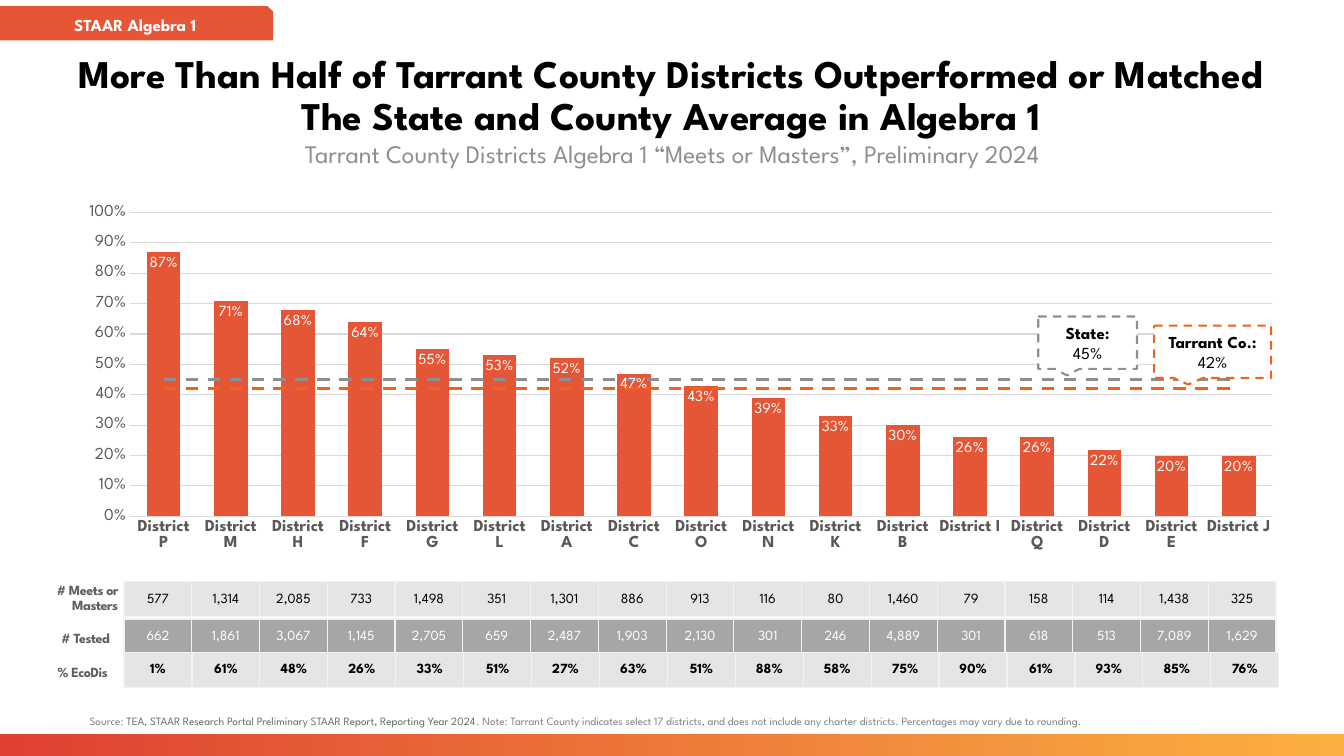
"""Build the Algebra 1 district results slide with a combined chart and data rows."""
from lxml import etree
from pptx import Presentation
from pptx.chart.data import CategoryChartData
from pptx.dml.color import RGBColor
from pptx.enum.chart import XL_CHART_TYPE, XL_LABEL_POSITION, XL_TICK_MARK
from pptx.enum.dml import MSO_LINE
from pptx.enum.shapes import MSO_SHAPE
from pptx.enum.text import MSO_ANCHOR, PP_ALIGN
from pptx.oxml import parse_xml
from pptx.oxml.ns import nsdecls, qn
from pptx.util import Inches, Pt

FONT = "League Spartan"
COLORS = {
    "orange": "E45635", "county": "EF6418", "state": "8B8E93", "black": "000000",
    "white": "FFFFFF", "axis": "595959", "grid": "D9D9D9", "label": "5C5F63",
    "pale": "E4E5E6", "mid": "A6A6A6", "border": "F2F2F2", "source": "808080",
    "report": "5E6E60", "bar_start": "DF4132", "bar_end": "FBB040",
}
TITLE = ("More Than Half of Tarrant County Districts Outperformed or Matched "
         "The State and County Average in Algebra 1")
SUBTITLE = "Tarrant County Districts Algebra 1 “Meets or Masters”, Preliminary 2024"
TAG = "STAAR Algebra 1"
SOURCE = [
    ("Source: ", {}),
    ("TEA, STAAR Research Portal Preliminary STAAR Report, Reporting Year 2024", {"color": "report"}),
    (". Note: Tarrant County indicates select 17 districts, and does not include any "
     "charter districts. Percentages may vary due to rounding.", {}),
]
DISTRICTS = [f"District {letter}" for letter in "PMHFGLACONKBIQDEJ"]
RATES = [0.87, 0.71, 0.68, 0.64, 0.55, 0.53, 0.52, 0.47, 0.43,
         0.39, 0.33, 0.3, 0.26, 0.26, 0.22, 0.2, 0.2]
AVERAGES = [("Series 2", 0.45, "state"), ("Series 3", 0.42, "county")]
CALLOUTS = [
    ("State:", "45%", "state", (77.25, 41.87, 7.35, 6.93)),
    ("Tarrant Co.:", "42%", "county", (85.88, 43.07, 8.7, 6.93)),
]
DATA_ROWS = [
    {"label": "# Meets or Masters", "label_box": (2.4, 76.4, 6.83, 5.6), "wrap": True,
     "box": (9.23, 76.93, 85.73, 4.67), "fill": "pale", "color": "black", "bold": False,
     "values": "577 1,314 2,085 733 1,498 351 1,301 886 913 116 80 1,460 79 158 114 1,438 325"},
    {"label": "# Tested", "label_box": (4.13, 82.8, 4.88, 3.47), "wrap": False,
     "box": (9.23, 81.87, 85.73, 4.67), "fill": "mid", "color": "white", "bold": False,
     "values": "662 1,861 3,067 1,145 2,705 659 2,487 1,903 2,130 301 246 4,889 301 618 513 7,089 1,629"},
    {"label": "% EcoDis", "label_box": (3.83, 87.33, 5.4, 3.47), "wrap": False,
     "box": (9.23, 86.27, 85.95, 4.67), "fill": "pale", "color": "black", "bold": True,
     "values": "1% 61% 48% 26% 33% 51% 27% 63% 51% 88% 58% 75% 90% 61% 93% 85% 76%"},
]
PLOT_AREA = {"x": 0.055, "y": 0.039, "w": 0.942, "h": 0.796}

presentation = Presentation()
presentation.slide_width, presentation.slide_height = Inches(13.33), Inches(7.5)
slide = presentation.slides.add_slide(presentation.slide_layouts[5])
shapes = slide.shapes


def rgb(name):
    return RGBColor.from_string(COLORS[name])


def place(box):
    """Turn percentages of the slide into lengths."""
    sides = (presentation.slide_width, presentation.slide_height) * 2
    return [int(side * share / 100) for side, share in zip(sides, box)]


def style_font(font, size, color, bold=False):
    font.name, font.size, font.bold = FONT, Pt(size), bold
    font.color.rgb = rgb(color)


def write(frame, *lines, size=12, color="black", bold=False, align=PP_ALIGN.CENTER,
          spacing=None, tracking=None, inset=0.06, wrap=True, anchor=MSO_ANCHOR.MIDDLE):
    """Fill a text frame; each line is a string or a list of (text, format) runs."""
    frame.word_wrap, frame.vertical_anchor = wrap, anchor
    frame.margin_left = frame.margin_right = Inches(inset)
    frame.margin_top = frame.margin_bottom = Inches(min(inset, 0.06))
    for number, line in enumerate(lines):
        paragraph = frame.add_paragraph() if number else frame.paragraphs[0]
        paragraph.alignment, paragraph.line_spacing = align, spacing
        for text, changes in [(line, {})] if isinstance(line, str) else line:
            run = paragraph.add_run()
            run.text = text
            style_font(run.font, **{"size": size, "color": color, "bold": bold, **changes})
            if tracking is not None:
                run.font._element.set("spc", str(int(tracking * 100)))


def add_box(kind, box, fill, line=None):
    shape = shapes.add_shape(kind, *place(box))
    shape.shadow.inherit = False
    shape.fill.solid()
    shape.fill.fore_color.rgb = rgb(fill)
    if line:
        shape.line.color.rgb = rgb(line)
        shape.line.width, shape.line.dash_style = Pt(1.5), MSO_LINE.DASH
    else:
        shape.line.fill.background()
    return shape


def add_text(box, *lines, **style):
    write(shapes.add_textbox(*place(box)).text_frame, *lines, **style)


def move_averages_to_lines(chart):
    """Move every series after the first from the bar plot to a line plot."""
    bars = chart._chartSpace.find(".//" + qn("c:barChart"))
    lines = parse_xml(f'<c:lineChart {nsdecls("c")}><c:grouping val="standard"/>'
                      '<c:varyColors val="0"/></c:lineChart>')
    for series in bars.findall(qn("c:ser"))[1:]:
        for flag in series.findall(qn("c:invertIfNegative")):
            series.remove(flag)
        marker = etree.Element(qn("c:marker"))
        etree.SubElement(marker, qn("c:symbol")).set("val", "none")
        series.find(qn("c:spPr")).addnext(marker)
        etree.SubElement(series, qn("c:smooth")).set("val", "0")
        lines.append(series)
    etree.SubElement(lines, qn("c:marker")).set("val", "1")
    for axis in bars.findall(qn("c:axId")):
        etree.SubElement(lines, qn("c:axId")).set("val", axis.get("val"))
    bars.addnext(lines)


def set_plot_area(chart):
    plot_area = chart._chartSpace.find(".//" + qn("c:plotArea"))
    for old in plot_area.findall(qn("c:layout")):
        plot_area.remove(old)
    layout = etree.Element(qn("c:layout"))
    manual = etree.SubElement(layout, qn("c:manualLayout"))
    settings = {"layoutTarget": "inner", "xMode": "edge", "yMode": "edge", **PLOT_AREA}
    for name, value in settings.items():
        etree.SubElement(manual, qn(f"c:{name}")).set("val", str(value))
    plot_area.insert(0, layout)


def add_results_chart(box):
    data = CategoryChartData(number_format="0%")
    data.categories = DISTRICTS
    data.add_series("Series 1", RATES)
    for name, average, _ in AVERAGES:
        data.add_series(name, [average] * len(DISTRICTS))
    chart = shapes.add_chart(XL_CHART_TYPE.COLUMN_CLUSTERED, *place(box), data).chart
    chart.has_legend = chart.has_title = False
    style_font(chart.font, 10, "black")
    plot = chart.plots[0]
    plot.gap_width, plot.vary_by_categories = 100, False
    rates, *averages = plot.series
    rates.format.fill.solid()
    rates.format.fill.fore_color.rgb = rgb("orange")
    labels = rates.data_labels
    labels.show_value, labels.position = True, XL_LABEL_POSITION.INSIDE_END
    labels.number_format, labels.number_format_is_linked = "0%", False
    style_font(labels.font, 11, "white")
    for series, (_, _, color) in zip(averages, AVERAGES):
        line = series.format.line
        line.color.rgb, line.width, line.dash_style = rgb(color), Pt(2.25), MSO_LINE.DASH
    for axis, bold in ((chart.category_axis, True), (chart.value_axis, False)):
        axis.major_tick_mark = axis.minor_tick_mark = XL_TICK_MARK.NONE
        style_font(axis.tick_labels.font, 12, "axis", bold)
    values = chart.value_axis
    values.minimum_scale, values.maximum_scale, values.major_unit = 0, 1, 0.1
    values.tick_labels.number_format, values.tick_labels.number_format_is_linked = "0%", False
    values.format.line.fill.background()
    for line in (chart.category_axis.format.line, values.major_gridlines.format.line):
        line.color.rgb, line.width = rgb("grid"), Pt(0.75)
    move_averages_to_lines(chart)
    set_plot_area(chart)


def add_data_row(row):
    add_text(row["label_box"], row["label"], size=10, color="label", bold=True, spacing=0.9,
             tracking=-0.3, wrap=row["wrap"],
             align=PP_ALIGN.RIGHT if row["wrap"] else PP_ALIGN.LEFT)
    table = shapes.add_table(1, len(DISTRICTS), *place(row["box"])).table
    table.first_row = table.horz_banding = False
    for cell, value in zip(table.iter_cells(), row["values"].split()):
        write(cell.text_frame, value, size=10, color=row["color"], bold=row["bold"], inset=0.01)
        cell.vertical_anchor = MSO_ANCHOR.MIDDLE
        cell.margin_left = cell.margin_right = cell.margin_top = Inches(0.01)
        cell.margin_bottom = 0
        cell.fill.solid()
        cell.fill.fore_color.rgb = rgb(row["fill"])
        for index, side in enumerate("LRTB"):
            cell._tc.get_or_add_tcPr().insert(index, parse_xml(
                f'<a:ln{side} {nsdecls("a")} w="12700"><a:solidFill>'
                f'<a:srgbClr val="{COLORS["border"]}"/></a:solidFill></a:ln{side}>'))


footer = add_box(MSO_SHAPE.RECTANGLE, (0, 97.07, 100, 2.93), "bar_start")
footer.fill.gradient()
footer.fill.gradient_angle = 0
for stop, color in zip(footer.fill.gradient_stops, ("bar_start", "bar_end")):
    stop.color.rgb = rgb(color)
title = shapes.title
title.left, title.top, title.width, title.height = place((4.72, 6.8, 90.38, 12))
write(title.text_frame, TITLE, size=28, bold=True, spacing=0.9, inset=0.1)
add_results_chart((4.72, 26.13, 90.23, 50.53))
add_text((3.38, 18, 93.3, 10), SUBTITLE, size=18, color="state", spacing=0.9, inset=0.1,
         anchor=MSO_ANCHOR.TOP)
for name, value, color, box in CALLOUTS:
    callout = add_box(MSO_SHAPE.RECTANGULAR_CALLOUT, box, "white", color)
    write(callout.text_frame, [(name, {"bold": True})], value)
for row in DATA_ROWS:
    add_data_row(row)
tag = add_box(MSO_SHAPE.SNIP_1_RECTANGLE, (0, 0.8, 20.33, 4.53), "orange")
write(tag.text_frame, TAG, color="white", bold=True)
add_text((5.93, 92.67, 89.18, 5.33), SOURCE, size=8, color="source", align=PP_ALIGN.LEFT, inset=0.1)
presentation.save("out.pptx")
